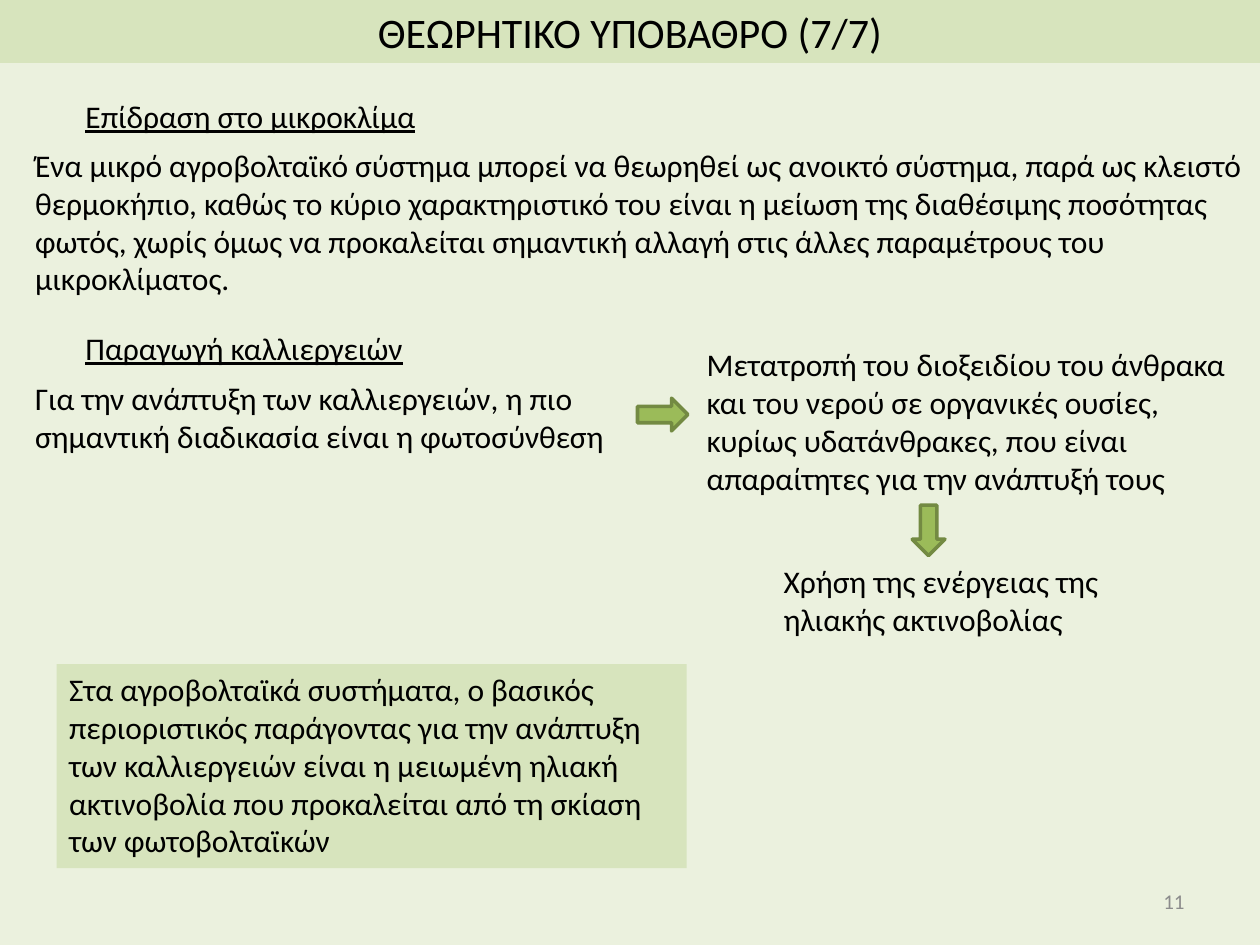
from pptx import Presentation
from pptx.dml.color import RGBColor
from pptx.enum.shapes import MSO_SHAPE
from pptx.enum.text import MSO_ANCHOR, MSO_AUTO_SIZE, PP_ALIGN
from pptx.util import Inches, Pt

LEFT, CENTER, RIGHT = PP_ALIGN.LEFT, PP_ALIGN.CENTER, PP_ALIGN.RIGHT
TOP, MIDDLE = MSO_ANCHOR.TOP, MSO_ANCHOR.MIDDLE
NO_FIT = MSO_AUTO_SIZE.NONE
DOWN_ARROW = MSO_SHAPE.DOWN_ARROW
TITLE_ONLY = 5


def rgb(value):
    return RGBColor.from_string(value)


def fill(obj, color):
    obj.fill.solid()
    obj.fill.fore_color.rgb = rgb(color)


def write(sp, text, size=18, color="000000", font="Calibri", underline=False,
          align=LEFT, anchor=TOP, wrap=True):
    tf = sp.text_frame
    tf.auto_size = NO_FIT
    tf.word_wrap = wrap
    tf.vertical_anchor = anchor
    p = tf.paragraphs[0]
    p.alignment = align
    r = p.add_run()
    r.text = text
    r.font.name = font
    r.font.size = Pt(size)
    r.font.underline = underline
    r.font.color.rgb = rgb(color)


class Deck:
    BACKGROUND = "EBF1DE"
    PANEL = "D7E4BD"
    ARROW = "9BBB59"
    ARROW_LINE = "738A42"
    MUTED = "8C8C8C"

    def __init__(self, prs):
        self.s = prs.slides.add_slide(prs.slide_layouts[TITLE_ONLY])
        fill(self.s.background, self.BACKGROUND)

    def title(self, text):
        sp = self.s.shapes.title
        sp.left, sp.top = Inches(0), Inches(0)
        sp.width, sp.height = Inches(10), Inches(0.5)
        fill(sp, self.PANEL)
        write(sp, text, size=24, align=CENTER, anchor=MIDDLE)

    def text(self, text, x, y, w, h, **style):
        sp = self.s.shapes.add_textbox(Inches(x), Inches(y), Inches(w), Inches(h))
        write(sp, text, **style)
        return sp

    def heading(self, text, y, w):
        self.text(text, 0.58, y, w, 0.4, underline=True, wrap=False)

    def panel(self, text, x, y, w, h):
        fill(self.text(text, x, y, w, h), self.PANEL)

    def arrow(self, x, y, rotation=0):
        sp = self.s.shapes.add_shape(DOWN_ARROW, Inches(x), Inches(y),
                                     Inches(0.26), Inches(0.4))
        sp.rotation = rotation
        sp.shadow.inherit = False
        fill(sp, self.ARROW)
        sp.line.color.rgb = rgb(self.ARROW_LINE)
        sp.line.width = Pt(2)

    def page_number(self, text):
        self.text(text, 7.17, 6.95, 2.33, 0.4, size=12, color=self.MUTED,
                  align=RIGHT, anchor=MIDDLE)


def main():
    prs = Presentation()
    prs.slide_width, prs.slide_height = Inches(10), Inches(7.5)
    deck = Deck(prs)

    deck.title("ΘΕΩΡΗΤΙΚΟ ΥΠΟΒΑΘΡΟ (7/7)")

    deck.heading("Επίδραση στο μικροκλίμα", 0.72, 2.85)
    deck.text("Ένα μικρό αγροβολταϊκό σύστημα μπορεί να θεωρηθεί ως ανοικτό "
              "σύστημα, παρά ως κλειστό θερμοκήπιο, καθώς το κύριο "
              "χαρακτηριστικό του είναι η μείωση της διαθέσιμης ποσότητας "
              "φωτός, χωρίς όμως να προκαλείται σημαντική αλλαγή στις άλλες "
              "παραμέτρους του μικροκλίματος.", 0.18, 1.11, 9.82, 1.31)

    deck.heading("Παραγωγή καλλιεργειών", 2.56, 2.75)
    deck.text("Για την ανάπτυξη των καλλιεργειών, η πιο σημαντική διαδικασία "
              "είναι η φωτοσύνθεση", 0.18, 2.96, 5, 0.71)
    deck.arrow(5.13, 3.09, rotation=270)
    deck.text("Μετατροπή του διοξειδίου του άνθρακα και του νερού σε "
              "οργανικές ουσίες, κυρίως υδατάνθρακες, που είναι απαραίτητες "
              "για την ανάπτυξή τους", 5.51, 2.69, 4.49, 1.31)
    deck.arrow(7.24, 4.01)
    deck.text("Χρήση της ενέργειας της ηλιακής ακτινοβολίας",
              6.12, 4.41, 2.78, 0.71)

    deck.panel("Στα αγροβολταϊκά συστήματα, ο βασικός περιοριστικός "
               "παράγοντας για την ανάπτυξη των καλλιεργειών είναι η "
               "μειωμένη ηλιακή ακτινοβολία που προκαλείται από τη σκίαση "
               "των φωτοβολταϊκών", 0.45, 5.27, 5, 1.62)
    deck.page_number("11")

    prs.save("out.pptx")


if __name__ == "__main__":
    main()
